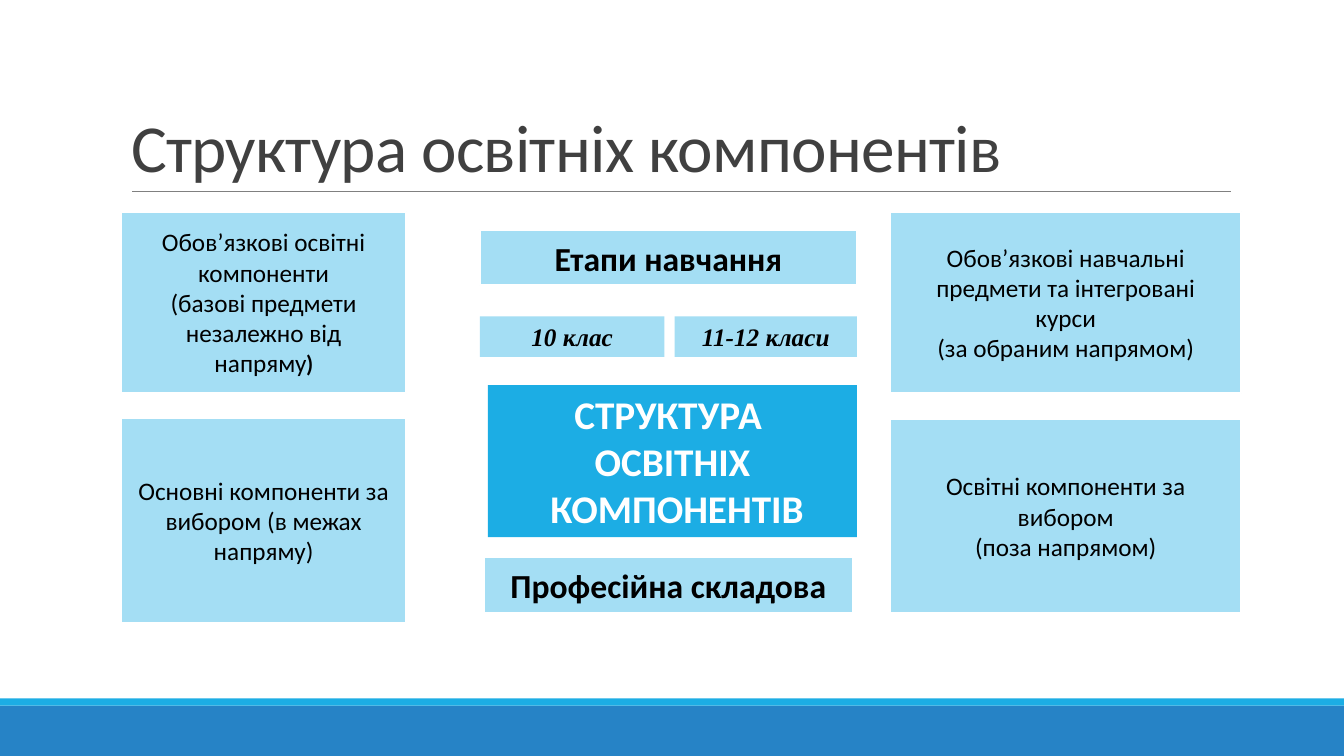
from dataclasses import dataclass

from pptx import Presentation
from pptx.dml.color import RGBColor
from pptx.enum.shapes import MSO_CONNECTOR, MSO_SHAPE
from pptx.enum.text import MSO_ANCHOR, PP_ALIGN
from pptx.oxml.ns import qn
from pptx.slide import Slide
from pptx.util import Inches, Pt
from lxml.etree import SubElement


@dataclass(frozen=True)
class Theme:
    pale: str = "A4DEF4"
    accent: str = "1CADE4"
    footer: str = "2683C6"
    rule: str = "808080"
    heading: str = "404040"
    dark: str = "000000"
    light: str = "FFFFFF"
    font: str = "Calibri"
    serif: str = "Times New Roman"
    bracket_font: str = "Lato"
    title_size: float = 48
    core_size: float = 28
    label_size: float = 24
    body_size: float = 18
    bracket_size: float = 16


THEME = Theme()


@dataclass(frozen=True)
class Style:
    size: float = THEME.body_size
    font: str = THEME.font
    color: str = THEME.dark
    bold: bool = False
    italic: bool = False


@dataclass(frozen=True)
class Span:
    text: str
    style: Style


@dataclass(frozen=True)
class Box:
    left: float
    top: float
    width: float
    height: float
    paragraphs: tuple[tuple[Span, ...], ...] = ()
    fill: str = THEME.pale
    outlined: bool = False


BODY = Style()
BRACKET = Style(THEME.bracket_size, THEME.bracket_font, bold=True)
LABEL = Style(THEME.label_size, bold=True)
GRADE = Style(font=THEME.serif, bold=True, italic=True)
CORE = Style(THEME.core_size, color=THEME.light, bold=True)
TITLE = Style(THEME.title_size, color=THEME.heading)


def lines(style: Style, *texts: str) -> tuple[tuple[Span, ...], ...]:
    return tuple((Span(text, style),) for text in texts)


def add_run(paragraph, span: Span):
    run = paragraph.add_run()
    run.text = span.text
    font, style = run.font, span.style
    font.name, font.size = style.font, Pt(style.size)
    font.bold, font.italic = style.bold, style.italic
    font.color.rgb = RGBColor.from_string(style.color)
    return run


def draw_box(slide: Slide, box: Box) -> None:
    rect = slide.shapes.add_shape(
        MSO_SHAPE.RECTANGLE, Inches(box.left), Inches(box.top),
        Inches(box.width), Inches(box.height))
    rect.shadow.inherit = False
    rect.fill.solid()
    rect.fill.fore_color.rgb = RGBColor.from_string(box.fill)
    frame = rect.text_frame
    frame.word_wrap = True
    if box.outlined:
        rect.line.color.rgb = RGBColor.from_string(THEME.light)
        rect.line.width = Pt(1.5)
        frame.vertical_anchor = MSO_ANCHOR.MIDDLE
        frame.margin_left = frame.margin_right = Inches(0.13)
        frame.margin_top = frame.margin_bottom = Inches(0.13)
    else:
        rect.line.fill.background()
        frame.vertical_anchor = MSO_ANCHOR.TOP
    for index, spans in enumerate(box.paragraphs):
        paragraph = frame.add_paragraph() if index else frame.paragraphs[0]
        paragraph.alignment = PP_ALIGN.CENTER
        for span in spans:
            add_run(paragraph, span)


def draw_title(slide: Slide, text: str) -> None:
    title = slide.shapes.title
    title.left, title.top = Inches(1.2), Inches(0.31)
    title.width, title.height = Inches(11), Inches(1.59)
    frame = title.text_frame
    frame.word_wrap = True
    frame.vertical_anchor = MSO_ANCHOR.BOTTOM
    paragraph = frame.paragraphs[0]
    paragraph.alignment = PP_ALIGN.LEFT
    paragraph.line_spacing = 0.85
    run = add_run(paragraph, Span(text, TITLE))
    run.font._element.set("spc", "-50")


def draw_title_rule(slide: Slide) -> None:
    rule = slide.shapes.add_connector(
        MSO_CONNECTOR.STRAIGHT, Inches(1.31), Inches(1.9), Inches(12.21), Inches(1.9))
    rule.line.color.rgb = RGBColor.from_string(THEME.rule)
    rule.line.width = Pt(0.5)
    SubElement(rule._element.spPr, qn("a:effectLst"))


# Bands along the bottom edge
FOOTER_BANDS = (
    Box(0, 7, 13.33, 0.5, fill=THEME.footer),
    Box(0, 6.93, 13.33, 0.07, fill=THEME.accent),
)

# Component cards in the left and right columns
LEFT, LEFT_WIDTH = 1.2, 2.83
RIGHT, RIGHT_WIDTH = 8.83, 3.48
CARD_TOP, CARD_HEIGHT = 2.1, 1.8
COMPONENT_CARDS = (
    Box(LEFT, CARD_TOP, LEFT_WIDTH, CARD_HEIGHT, (
        (Span("Обов’язкові освітні компоненти", BODY),),
        (Span("(базові предмети незалежно від напряму", BODY), Span(")", BRACKET)),
    ), outlined=True),
    Box(LEFT, 4.15, LEFT_WIDTH, 2.03,
        lines(BODY, "Основні компоненти за вибором (в межах напряму)"), outlined=True),
    Box(RIGHT, CARD_TOP, RIGHT_WIDTH, CARD_HEIGHT,
        lines(BODY, "Обов’язкові навчальні предмети та інтегровані курси",
              "(за обраним напрямом)"), outlined=True),
    Box(RIGHT, 4.16, RIGHT_WIDTH, 1.92,
        lines(BODY, "Освітні компоненти за вибором", "(поза напрямом)"), outlined=True),
)

# Middle column: stages, grades, core and vocational part
MIDDLE, GRADE_TOP, GRADE_HEIGHT = 4.76, 3.14, 0.4
MIDDLE_COLUMN = (
    Box(4.8, 5.53, 3.66, 0.55, lines(LABEL, "Професійна складова"), outlined=True),
    Box(MIDDLE, 2.28, 3.74, 0.55, lines(LABEL, "Етапи навчання"), outlined=True),
    Box(MIDDLE, GRADE_TOP, 1.83, GRADE_HEIGHT, lines(GRADE, "10 клас")),
    Box(6.69, GRADE_TOP, 1.81, GRADE_HEIGHT, lines(GRADE, "11-12 класи")),
    Box(4.84, 3.82, 3.66, 1.51,
        lines(CORE, "СТРУКТУРА ", "ОСВІТНІХ", " КОМПОНЕНТІВ"), fill=THEME.accent),
)


def main() -> None:
    deck = Presentation()
    deck.slide_width, deck.slide_height = Inches(13.33), Inches(7.5)
    slide = deck.slides.add_slide(deck.slide_layouts.get_by_name("Title Only"))
    draw_title(slide, "Структура освітніх компонентів")
    draw_title_rule(slide)
    for box in FOOTER_BANDS + COMPONENT_CARDS + MIDDLE_COLUMN:
        draw_box(slide, box)
    deck.save("out.pptx")


if __name__ == "__main__":
    main()
